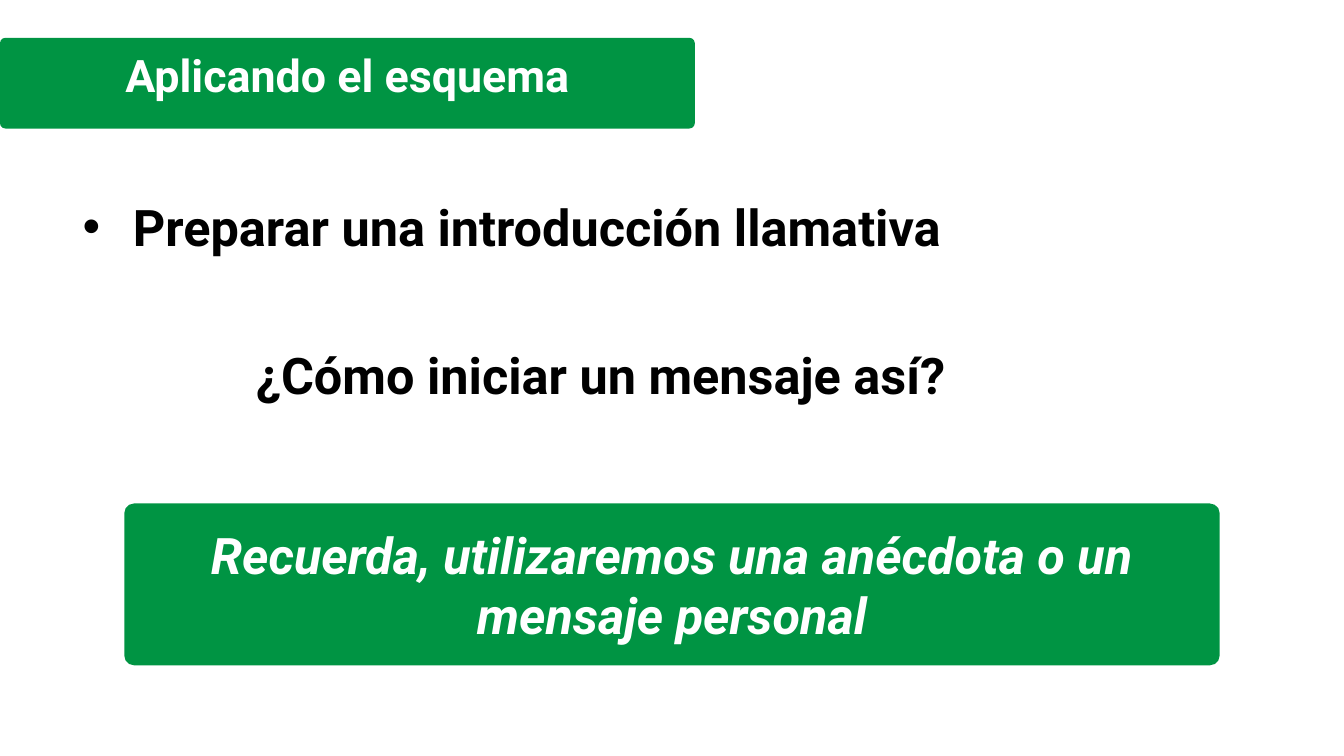
from lxml.etree import SubElement
from pptx import Presentation
from pptx.dml.color import RGBColor
from pptx.enum.shapes import MSO_SHAPE
from pptx.enum.text import MSO_ANCHOR, PP_ALIGN
from pptx.oxml.ns import qn
from pptx.util import Inches, Pt

GREEN = RGBColor(0x00, 0x94, 0x43)
WHITE = RGBColor(0xFF, 0xFF, 0xFF)
BLACK = RGBColor(0x00, 0x00, 0x00)

# Grid: 100 columns by 100 rows
presentation = Presentation()
presentation.slide_width = Inches(20)
presentation.slide_height = Inches(11.25)
COLUMN = presentation.slide_width / 100
ROW = presentation.slide_height / 100
slide = presentation.slides.add_slide(presentation.slide_layouts[6])


def place(left, top, width, height):
    return [round(size) for size in (left * COLUMN, top * ROW, width * COLUMN, height * ROW)]


def write(shape, text, size=54, color=BLACK, italic=False, align=PP_ALIGN.LEFT):
    shape.text_frame.word_wrap = True
    paragraph = shape.text_frame.paragraphs[0]
    paragraph.alignment = align
    run = paragraph.add_run()
    run.text = text
    run.font.name = "Roboto"
    run.font.size = Pt(size)
    run.font.bold = True
    run.font.italic = italic
    run.font.color.rgb = color
    return paragraph


# Green rounded panels: title band and reminder
panels = []
for box, rounding in (((0, 5, 51.7, 12), 0.06), ((9.25, 66.6, 81.5, 21.4), 0.06)):
    panel = slide.shapes.add_shape(MSO_SHAPE.ROUNDED_RECTANGLE, *place(*box))
    panel.adjustments[0] = rounding
    panel.shadow.inherit = False
    panel.fill.solid()
    panel.fill.fore_color.rgb = GREEN
    panel.line.fill.background()
    panels.append(panel)
title_band, reminder = panels

# Title
title = slide.shapes.add_textbox(*place(0, 7.1, 51.7, 7.7))
frame = title.text_frame
frame.margin_left = frame.margin_right = frame.margin_top = frame.margin_bottom = 0
paragraph = write(title, "Aplicando el esquema", size=48, color=WHITE, align=PP_ALIGN.CENTER)
paragraph.line_spacing = 0.9
paragraph.space_before = Pt(10)

# Bulleted step with a hanging indent
step = slide.shapes.add_textbox(*place(5.65, 25.5, 88.75, 9))
paragraph = write(step, "Preparar una introducción llamativa")
properties = paragraph._p.get_or_add_pPr()
properties.set("marL", str(Inches(0.75)))
properties.set("indent", str(-Inches(0.75)))
SubElement(properties, qn("a:buFont"), typeface="Arial")
SubElement(properties, qn("a:buChar"), char="•")

# Question
question = slide.shapes.add_textbox(*place(18.55, 45.1, 62.95, 9))
write(question, "¿Cómo iniciar un mensaje así?")

# Reminder text
frame = reminder.text_frame
frame.margin_left = frame.margin_right = frame.margin_top = frame.margin_bottom = Inches(0.1)
frame.vertical_anchor = MSO_ANCHOR.MIDDLE
write(reminder, "Recuerda, utilizaremos una anécdota o un mensaje personal",
      color=WHITE, italic=True, align=PP_ALIGN.CENTER)

presentation.save("out.pptx")
